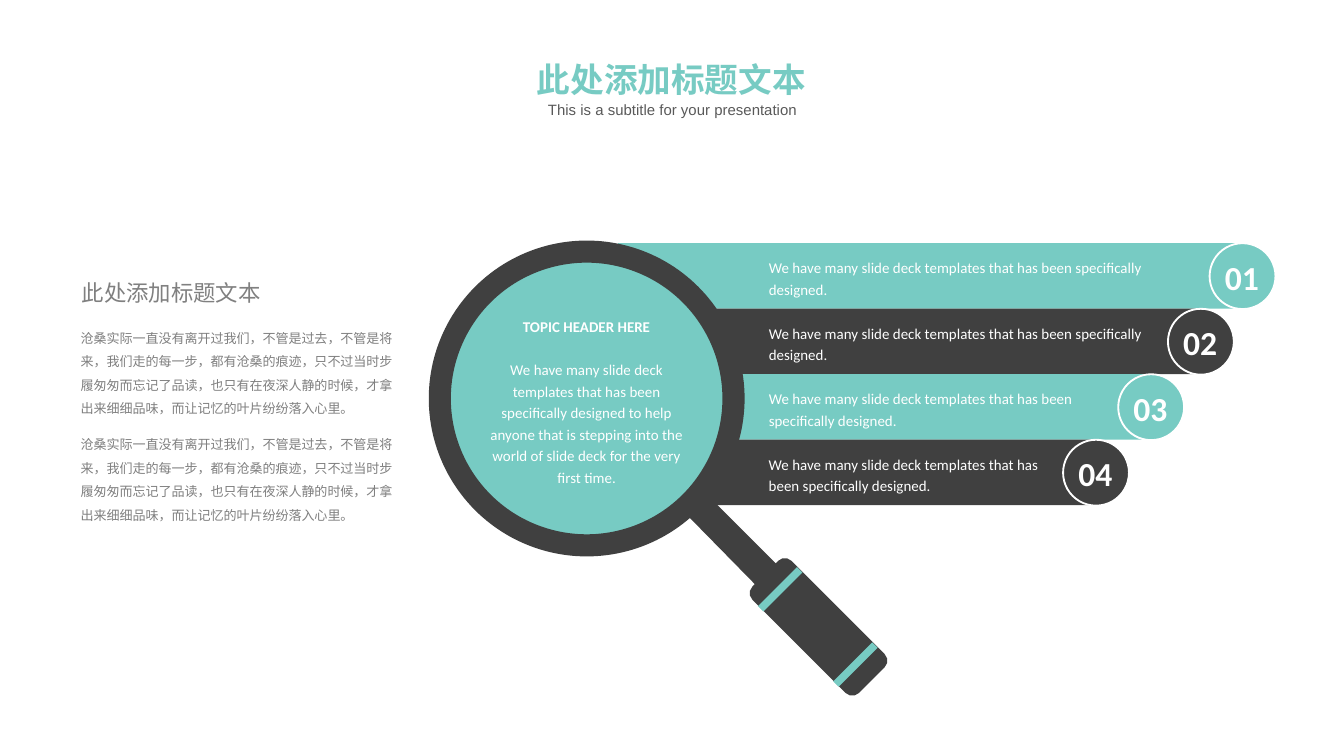
"""Build a magnifying-glass infographic slide with four numbered bars."""
from dataclasses import dataclass

from lxml import etree
from pptx import Presentation
from pptx.dml.color import RGBColor
from pptx.enum.shapes import MSO_SHAPE
from pptx.enum.text import MSO_ANCHOR, MSO_AUTO_SIZE, PP_ALIGN
from pptx.oxml.ns import qn
from pptx.util import Inches, Pt

TEAL = RGBColor(0x77, 0xCB, 0xC3)
DARK = RGBColor(0x40, 0x40, 0x40)
GRAY = RGBColor(0x80, 0x80, 0x80)
SUBTITLE_GRAY = RGBColor(0x59, 0x59, 0x59)
WHITE = RGBColor(0xFF, 0xFF, 0xFF)

RECT, OVAL = MSO_SHAPE.RECTANGLE, MSO_SHAPE.OVAL
DONUT, ROUNDED = MSO_SHAPE.DONUT, MSO_SHAPE.ROUNDED_RECTANGLE
LEFT, CENTER = PP_ALIGN.LEFT, PP_ALIGN.CENTER
TOP, NO_FIT = MSO_ANCHOR.TOP, MSO_AUTO_SIZE.NONE

CJK, LATIN = "Noto Sans CJK SC", "Calibri"
SLIDE_WIDTH = 10
SLIDE_HEIGHT = SLIDE_WIDTH * 9 / 16
BAR_TOP, BAR_HEIGHT, BADGE_SIZE = 1.81, 1.95 / 4, 0.49
HEADING = "此处添加标题文本"
STORY = (
    "沧桑实际一直没有离开过我们，不管是过去，不管是将来，我们走的每一步，"
    "都有沧桑的痕迹，只不过当时步履匆匆而忘记了品读，也只有在夜深人静的时候，"
    "才拿出来细细品味，而让记忆的叶片纷纷落入心里。"
)
BAR_TEXT = "We have many slide deck templates that has been specifically designed."
TOPIC_TEXT = (
    "We have many slide deck templates that has been specifically designed to help "
    "anyone that is stepping into the world of slide deck for the very first time."
)


@dataclass(frozen=True)
class Box:
    left: float
    top: float
    width: float
    height: float


@dataclass(frozen=True)
class Style:
    size: float
    font: str
    color: RGBColor
    bold: bool = False
    align: PP_ALIGN = LEFT
    spacing: float = 1.0


@dataclass(frozen=True)
class Bar:
    left: float
    badge_left: float
    text_width: float
    color: RGBColor


BARS = [
    Bar(4.6, 9.0, 3.22, TEAL),
    Bar(4.29, 8.69, 2.91, DARK),
    Bar(3.92, 8.32, 2.51, TEAL),
    Bar(3.87, 7.91, 2.2, DARK),
]
HANDLE_NECK = [(5.63, 4.36), (5.1, 3.82), (5.25, 3.67), (5.79, 4.21)]
BAND = [(0.04, 0.33), (0, 0.29), (0.29, 0), (0.33, 0.04)]
BAND_ORIGINS = [(5.64, 4.22), (6.2, 4.78)]

BAR_STYLE = Style(8, LATIN, WHITE, spacing=1.2)
TOPIC_STYLE = Style(8, LATIN, WHITE, align=CENTER, spacing=1.2)
TOPIC_HEADER_STYLE = Style(8, LATIN, WHITE, True, CENTER, 1.2)
NUMBER_STYLE = Style(18, LATIN, WHITE, True, CENTER)
TITLE_STYLE = Style(18, CJK, TEAL, True, CENTER)
SUBTITLE_STYLE = Style(8, "Arial", SUBTITLE_GRAY, align=CENTER)
HEADING_STYLE = Style(12, CJK, GRAY)
STORY_STYLE = Style(7, CJK, GRAY, spacing=1.5)


def set_all(target, values: dict) -> None:
    for name, value in values.items():
        setattr(target, name, value)


def lengths(box: Box) -> list:
    return [Inches(side) for side in (box.left, box.top, box.width, box.height)]


def paint(shape, color: RGBColor, outline: bool = False):
    shape.shadow.inherit = False
    shape.fill.solid()
    shape.fill.fore_color.rgb = color
    if outline:
        shape.line.color.rgb = WHITE
        shape.line.width = Pt(1)
    else:
        shape.line.fill.background()
    return shape


def add_preset(slide, kind: MSO_SHAPE, box: Box, color: RGBColor, outline=False):
    return paint(slide.shapes.add_shape(kind, *lengths(box)), color, outline)


def add_polygon(slide, points: list, color: RGBColor) -> None:
    start, *corners = [(Inches(x), Inches(y)) for x, y in points]
    builder = slide.shapes.build_freeform(*start)
    builder.add_line_segments(corners, close=True)
    paint(builder.convert_to_shape(), color)


def write(paragraph, text: str, style: Style, before: float = 0) -> None:
    properties = paragraph._p.get_or_add_pPr()
    set_all(paragraph, {"alignment": style.align, "line_spacing": style.spacing,
                        "space_before": Pt(before)})
    properties.set("marL", "0")
    properties.set("indent", "0")
    etree.SubElement(properties, qn("a:buNone"))
    run = paragraph.add_run()
    run.text = text
    set_all(run.font, {"size": Pt(style.size), "name": style.font, "bold": style.bold})
    run.font.color.rgb = style.color
    east_asian = etree.SubElement(run._r.get_or_add_rPr(), qn("a:ea"))
    east_asian.set("typeface", style.font)


def fill_text(holder, box: Box, text: str, style: Style, inset: bool = False):
    sides = dict(zip(("left", "top", "width", "height"), lengths(box)))
    set_all(holder, sides)
    across, down = (0.1, 0.05) if inset else (0, 0)
    set_all(holder.text_frame, {
        "word_wrap": True, "auto_size": NO_FIT, "vertical_anchor": TOP,
        "margin_left": Inches(across), "margin_right": Inches(across),
        "margin_top": Inches(down), "margin_bottom": Inches(down),
    })
    write(holder.text_frame.paragraphs[0], text, style)
    return holder.text_frame


def add_text(slide, box: Box, text: str, style: Style, inset: bool = False):
    return fill_text(slide.shapes.add_textbox(*lengths(box)), box, text, style, inset)


def add_bars(slide) -> None:
    for row, bar in enumerate(BARS):
        top = BAR_TOP + row * BAR_HEIGHT
        width = bar.badge_left + BADGE_SIZE / 2 - bar.left
        badge = Box(bar.badge_left, top, BADGE_SIZE, BADGE_SIZE)
        add_preset(slide, RECT, Box(bar.left, top, width, BAR_HEIGHT), bar.color)
        add_preset(slide, OVAL, badge, bar.color, True)
        add_text(slide, Box(5.72, top + 0.09, bar.text_width, 0.32), BAR_TEXT, BAR_STYLE)
        number = Box(bar.badge_left, top + 0.05, 0.48, 0.4)
        add_text(slide, number, f"{row + 1:02}", NUMBER_STYLE, True)


def add_magnifier(slide) -> None:
    add_preset(slide, OVAL, Box(3.35, 1.94, 2.05, 2.05), TEAL)
    rim = add_preset(slide, DONUT, Box(3.19, 1.79, 2.35, 2.35), DARK)
    rim.adjustments[0] = 0.07
    add_polygon(slide, HANDLE_NECK, DARK)
    grip = add_preset(slide, ROUNDED, Box(5.53, 4.46, 1.12, 0.41), DARK)
    grip.adjustments[0] = 0.17
    grip.rotation = 45
    for left, top in BAND_ORIGINS:
        add_polygon(slide, [(left + x, top + y) for x, y in BAND], TEAL)
    topic = add_text(slide, Box(3.57, 2.34, 1.59, 1.28), "TOPIC HEADER HERE",
                     TOPIC_HEADER_STYLE)
    write(topic.add_paragraph(), TOPIC_TEXT, TOPIC_STYLE, before=11.5)


def main() -> None:
    deck = Presentation()
    set_all(deck, {"slide_width": Inches(SLIDE_WIDTH),
                   "slide_height": Inches(SLIDE_HEIGHT)})
    slide = deck.slides.add_slide(deck.slide_layouts[3])
    title, *stories = slide.placeholders
    fill_text(title, Box(3.78, 0.39, 2.43, 0.4), HEADING, TITLE_STYLE, True)
    for story, top in zip(stories, (2.4, 3.19)):
        fill_text(story, Box(0.6, top, 2.41, 0.71), STORY, STORY_STYLE)
    add_text(slide, Box(4.02, 0.75, 1.97, 0.13),
             "This is a subtitle for your presentation", SUBTITLE_STYLE)
    add_text(slide, Box(0.51, 2.03, 2.43, 0.3), HEADING, HEADING_STYLE, True)
    add_bars(slide)
    add_magnifier(slide)
    deck.save("out.pptx")


if __name__ == "__main__":
    main()
